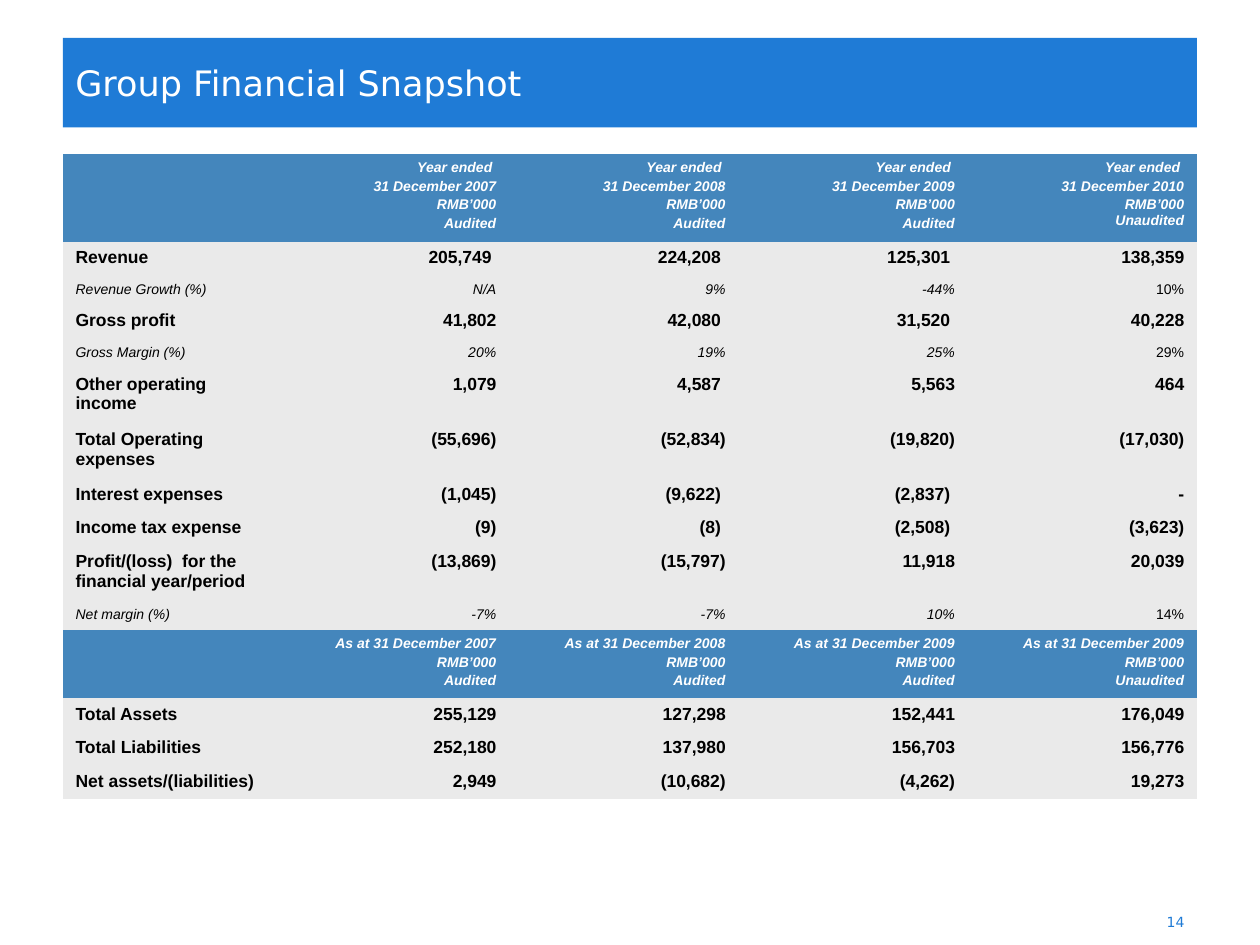
"""Build the group financial snapshot slide."""
from pptx import Presentation
from pptx.dml.color import RGBColor
from pptx.enum.shapes import MSO_SHAPE
from pptx.enum.text import MSO_ANCHOR, PP_ALIGN
from pptx.util import Inches, Pt

theme = {
    "blue": RGBColor.from_string("1F7BD6"),
    "steel": RGBColor.from_string("4486BC"),
    "grey": RGBColor.from_string("EAEAEA"),
    "white": RGBColor.from_string("FFFFFF"),
    "black": RGBColor.from_string("000000"),
    "sans": "DejaVu Sans", "body": "Arial",
    "title": Pt(20), "main": Pt(10), "small": Pt(8),
    "plain": "{2D5ABB26-0587-4C30-8999-92F81FD0307C}",
}


def style(font, tint, **form):
    for key, val in form.items():
        setattr(font, key, val)
    font.color.rgb = theme[tint]


def write(frame, lines, align, tint, gaps=(), **form):
    frame.word_wrap = True
    for num, line in enumerate(lines):
        para = frame.paragraphs[0] if num == 0 else frame.add_paragraph()
        para.alignment = align
        if num:
            para.space_before = Pt(gaps[num])
        run = para.add_run()
        run.text = line
        style(run.font, tint, **form)


deck = Presentation()
deck.slide_width, deck.slide_height = Inches(10), Inches(7.5)
wide, high = deck.slide_width, deck.slide_height
slide = deck.slides.add_slide(deck.slide_layouts[6])
left, span = int(wide * 0.05), int(wide * 0.9)

page = slide.shapes.add_textbox(int(wide * 0.717), int(high * 0.95),
                                int(wide * 0.233), int(high * 0.05))
page.text_frame.vertical_anchor = MSO_ANCHOR.MIDDLE
write(page.text_frame, ["14"], PP_ALIGN.RIGHT, "blue",
      name=theme["sans"], size=theme["small"])

bar = slide.shapes.add_shape(MSO_SHAPE.RECTANGLE, left, int(high * 0.04),
                             span, int(high * 0.095))
bar.shadow.inherit = False
bar.fill.solid()
bar.fill.fore_color.rgb = theme["blue"]
bar.line.fill.background()
bar.text_frame.vertical_anchor = MSO_ANCHOR.MIDDLE
write(bar.text_frame, ["Group Financial Snapshot"], PP_ALIGN.LEFT, "white",
      name=theme["sans"], size=theme["title"])

years = (2007, 2008, 2009, 2010)
dates = (2007, 2008, 2009, 2009)
marks = ("Audited",) * 3 + ("Unaudited",)
tops = [f"Year ended \n31 December {year}\nRMB’000\n{mark}"
        for year, mark in zip(years, marks)]
mids = [f"As at 31 December {date}\nRMB’000\n{mark}"
        for date, mark in zip(dates, marks)]

rows = [
    ("head", 0.67, "", *tops),
    ("main", 0.26, "Revenue", "205,749 ", "224,208 ", "125,301 ", "138,359"),
    ("ratio", 0.22, "Revenue Growth (%)", "N/A", "9%", "-44%", "10%"),
    ("main", 0.26, "Gross profit", "41,802", "42,080 ", "31,520 ", "40,228"),
    ("ratio", 0.22, "Gross Margin (%)", "20%", "19%", "25%", "29%"),
    ("main", 0.44, "Other operating income", "1,079", "4,587 ", "5,563", "464"),
    ("main", 0.41, "Total Operating expenses",
     "(55,696)", "(52,834)", "(19,820)", "(17,030)"),
    ("main", 0.26, "Interest expenses", "(1,045)", "(9,622) ", "(2,837) ", "-"),
    ("main", 0.26, "Income tax expense", "(9)", "(8) ", "(2,508) ", "(3,623)"),
    ("main", 0.41, "Profit/(loss)  for the financial year/period",
     "(13,869)", "(15,797)", "11,918", "20,039"),
    ("ratio", 0.22, "Net margin (%)", "-7%", "-7%", "10%", "14%"),
    ("head", 0.52, "", *mids),
    ("main", 0.26, "Total Assets", "255,129", "127,298", "152,441", "176,049"),
    ("main", 0.26, "Total Liabilities",
     "252,180", "137,980", "156,703", "156,776"),
    ("main", 0.26, "Net assets/(liabilities)",
     "2,949", "(10,682)", "(4,262)", "19,273"),
]
kinds = {
    "head": ("steel", "white", {"size": theme["small"], "bold": True, "italic": True}),
    "main": ("grey", "black", {"size": theme["main"], "bold": True, "italic": False}),
    "ratio": ("grey", "black", {"size": theme["small"], "bold": False, "italic": True}),
}

tall = sum(Inches(row[1]) for row in rows)
grid = slide.shapes.add_table(len(rows), 5, left, Inches(1.22), span, tall).table
grid.first_row = grid.horz_banding = False
grid._tbl.tblPr[0].text = theme["plain"]
step = int(wide * 0.182)
for col, size in zip(grid.columns, [span - 4 * step] + [step] * 4):
    col.width = size

for r, (kind, size, *texts) in enumerate(rows):
    grid.rows[r].height = Inches(size)
    fill, tint, form = kinds[kind]
    for c, text in enumerate(texts):
        cell = grid.cell(r, c)
        cell.fill.solid()
        cell.fill.fore_color.rgb = theme[fill]
        if not text:
            continue
        slant = form["italic"] and not (kind == "ratio" and c == 4)
        gaps = [0, 1.6, 1.6, 0 if c == 4 else 1.6]
        write(cell.text_frame, text.split("\n"),
              PP_ALIGN.RIGHT if c else PP_ALIGN.LEFT, tint, gaps,
              **{**form, "name": theme["body"], "italic": slant})

deck.save("out.pptx")
